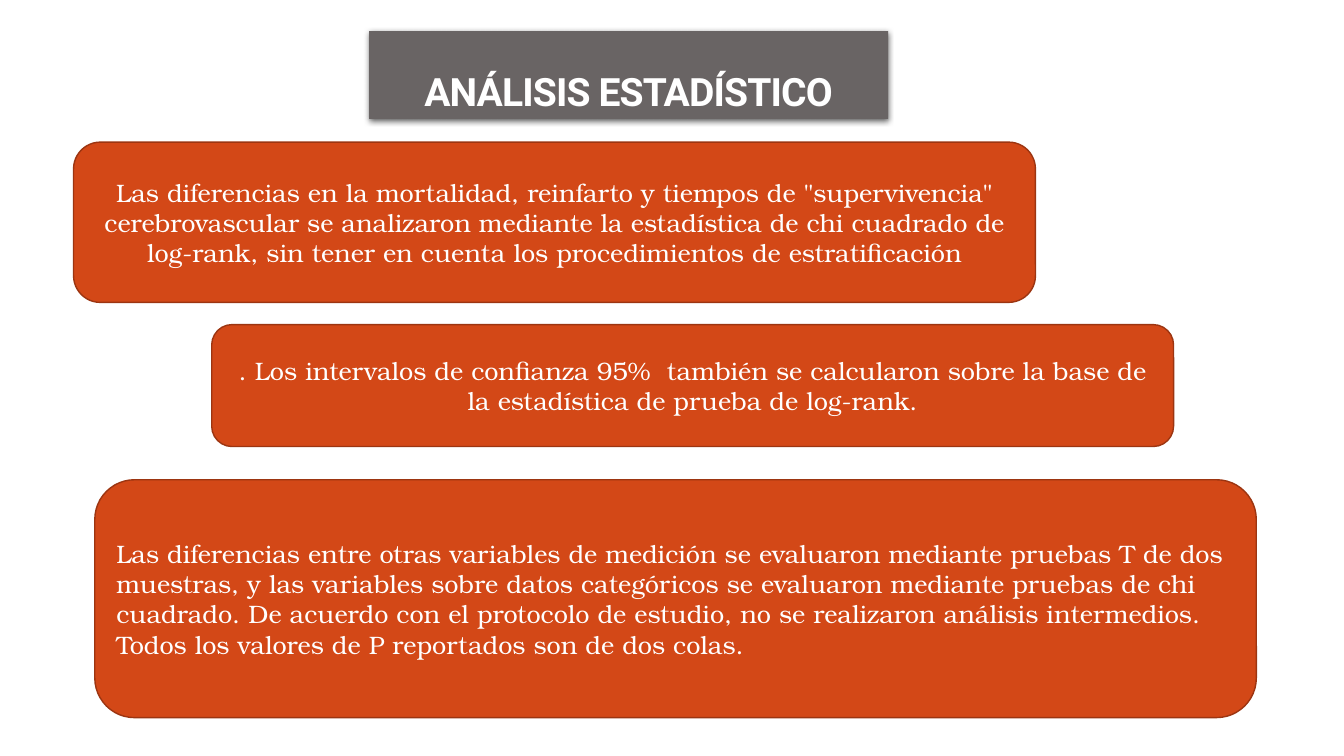
from lxml.etree import SubElement
from pptx import Presentation
from pptx.dml.color import RGBColor
from pptx.enum.shapes import MSO_SHAPE
from pptx.enum.text import MSO_ANCHOR, MSO_AUTO_SIZE, PP_ALIGN
from pptx.oxml.ns import qn
from pptx.util import Inches, Pt

TITLE_FORMAT = {"name": "Roboto", "size": Pt(27.9), "bold": True}
BODY_FORMAT = {"name": "TeX Gyre Bonum", "size": Pt(18)}
STATEMENTS = [
    ((0.73, 1.41, 9.54, 1.59), PP_ALIGN.CENTER,
     'Las diferencias en la mortalidad, reinfarto y tiempos de "supervivencia" '
     "cerebrovascular se analizaron mediante la estadística de chi cuadrado de "
     "log-rank, sin tener en cuenta los procedimientos de estratificación"),
    ((2.1, 3.22, 9.54, 1.21), PP_ALIGN.CENTER,
     ". Los intervalos de confianza 95%  también se calcularon sobre la base de "
     "la estadística de prueba de log-rank."),
    ((0.94, 4.76, 11.52, 2.36), PP_ALIGN.LEFT,
     "Las diferencias entre otras variables de medición se evaluaron mediante "
     "pruebas T de dos muestras, y las variables sobre datos categóricos se "
     "evaluaron mediante pruebas de chi cuadrado. De acuerdo con el protocolo de "
     "estudio, no se realizaron análisis intermedios. Todos los valores de P "
     "reportados son de dos colas."),
]


def paint(color_format, color):
    """Apply a hex colour to a colour format."""
    color_format.rgb = RGBColor.from_string(color)


def fill_shape(shape, color):
    """Give a shape a solid fill."""
    shape.fill.solid()
    paint(shape.fill.fore_color, color)


def write_text(shape, text, font_format, anchor, alignment):
    """Write one white formatted paragraph in a shape and return its run."""
    frame = shape.text_frame
    frame.word_wrap = True
    frame.auto_size = MSO_AUTO_SIZE.NONE
    frame.vertical_anchor = anchor
    para = frame.paragraphs[0]
    para.alignment = alignment
    span = para.add_run()
    span.text = text
    for name, value in font_format.items():
        setattr(span.font, name, value)
    paint(span.font.color, "FFFFFF")
    return span


def add_soft_shadow(shape):
    """Add a soft shadow that falls straight down."""
    effects = SubElement(shape._element.spPr, qn("a:effectLst"))
    shadow = SubElement(effects, qn("a:outerShdw"), blurRad=str(Pt(4)),
                        dist=str(Pt(1.5)), dir="5400000", rotWithShape="0")
    color = SubElement(shadow, qn("a:srgbClr"), val="000000")
    SubElement(color, qn("a:alpha"), val="60000")


def place_title(page, text):
    """Turn the title placeholder into the grey heading bar."""
    title = page.shapes.title
    title.left, title.top = Inches(3.66), Inches(0.31)
    title.width, title.height = Inches(5.15), Inches(0.87)
    fill_shape(title, "696464")
    add_soft_shadow(title)
    span = write_text(title, text, TITLE_FORMAT, MSO_ANCHOR.BOTTOM, PP_ALIGN.CENTER)
    span.font._element.set("spc", "-60")


def add_statement(page, position, alignment, text):
    """Add an orange rounded box holding one statement."""
    box = page.shapes.add_shape(MSO_SHAPE.ROUNDED_RECTANGLE, *map(Inches, position))
    box.shadow.inherit = False
    fill_shape(box, "D34817")
    paint(box.line.color, "9C3511")
    box.line.width = Pt(1)
    write_text(box, text, BODY_FORMAT, MSO_ANCHOR.MIDDLE, alignment)


def main():
    """Build and save the slide."""
    deck = Presentation()
    deck.slide_width, deck.slide_height = Inches(13.33), Inches(7.5)
    page = deck.slides.add_slide(deck.slide_layouts[5])
    place_title(page, "ANÁLISIS ESTADÍSTICO")
    for position, alignment, text in STATEMENTS:
        add_statement(page, position, alignment, text)
    deck.save("out.pptx")


if __name__ == "__main__":
    main()
